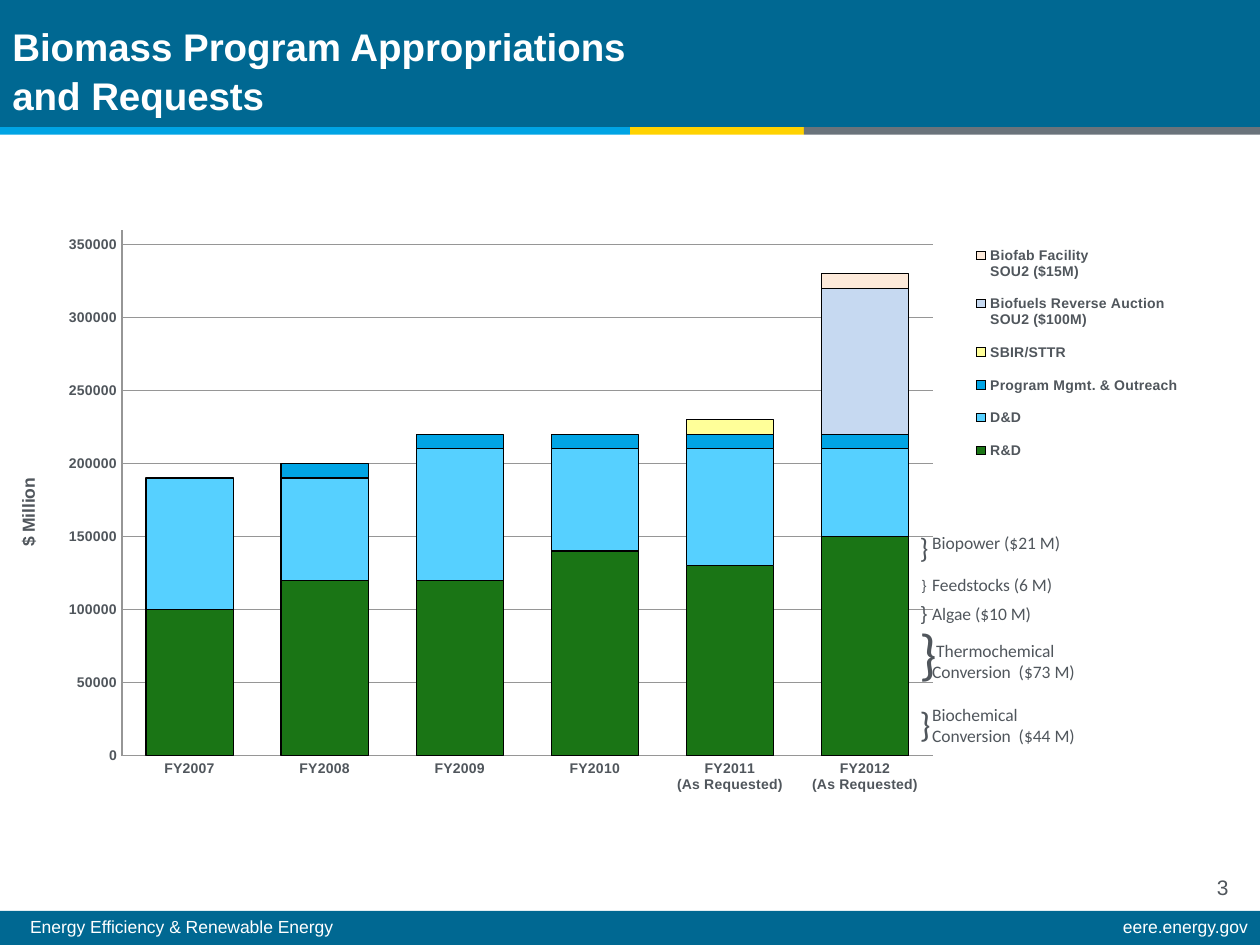
from dataclasses import dataclass

from lxml import etree
from pptx import Presentation
from pptx.chart.data import CategoryChartData
from pptx.dml.color import RGBColor
from pptx.enum.chart import XL_CHART_TYPE, XL_LEGEND_POSITION, XL_TICK_MARK
from pptx.enum.shapes import MSO_SHAPE
from pptx.enum.text import MSO_ANCHOR, PP_ALIGN
from pptx.oxml.ns import qn
from pptx.util import Inches, Pt

STACKED = XL_CHART_TYPE.COLUMN_STACKED
RIGHT_SIDE = XL_LEGEND_POSITION.RIGHT
NO_TICK = XL_TICK_MARK.NONE
RECT = MSO_SHAPE.RECTANGLE
MIDDLE = MSO_ANCHOR.MIDDLE
CENTER, RIGHT = PP_ALIGN.CENTER, PP_ALIGN.RIGHT


@dataclass(frozen=True)
class Theme:
    navy: str = "006892"
    sky: str = "00A4E4"
    gold: str = "FFD200"
    slate: str = "6A737B"
    text: str = "50565C"
    white: str = "FFFFFF"
    black: str = "000000"
    grid: str = "969696"
    sans: str = "Arial"
    label: str = "Calibri"
    title: int = 22
    page: int = 12
    body: int = 10
    small: int = 8


THEME = Theme()

YEARS = ["FY2007", "FY2008", "FY2009", "FY2010",
         "FY2011\n(As Requested)", "FY2012\n(As Requested)"]
FUNDS = [
    ("R&D", "1A7515", [100000, 120000, 120000, 140000, 130000, 150000]),
    ("D&D", "56D0FF", [90000, 70000, 90000, 70000, 80000, 60000]),
    ("Program Mgmt. & Outreach", THEME.sky,
     [0, 10000, 10000, 10000, 10000, 10000]),
    ("SBIR/STTR", "FFFF99", [0, 0, 0, 0, 10000, 0]),
    ("Biofuels Reverse Auction \nSOU2 ($100M)", "C6D9F1",
     [0, 0, 0, 0, 0, 100000]),
    ("Biofab Facility\nSOU2 ($15M)", "FDEADA", [0, 0, 0, 0, 0, 10000]),
]
NOTES = [
    ("Biopower ($21 M)", 4.17, 1.39, 0.27),
    ("Feedstocks (6 M)", 4.51, 1.39, 0.27),
    ("Algae ($10 M)", 4.74, 1.3, 0.27),
    (" Thermochemical Conversion  ($73 M)", 5.03, 1.48, 0.43),
    ("Biochemical\nConversion  ($44 M)", 5.54, 1.65, 0.43),
]
BRACES = [
    (4.16, 0.26, 0.37, 16, THEME.label),
    (4.53, 0.27, 0.23, 8, THEME.sans),
    (4.72, 0.27, 0.29, 11, THEME.sans),
    (4.86, 0.28, 0.63, 32, THEME.label),
    (5.53, 0.28, 0.43, 20, THEME.label),
]


def apply(obj, values):
    for name, value in values.items():
        setattr(obj, name, value)


def color(code):
    return RGBColor.from_string(code)


def place(node, index, **spots):
    old = node.find(qn("c:layout"))
    if old is not None:
        node.remove(old)
    layout = etree.Element(qn("c:layout"))
    manual = etree.SubElement(layout, qn("c:manualLayout"))
    for tag, value in spots.items():
        etree.SubElement(manual, qn("c:" + tag)).set("val", str(value))
    node.insert(index, layout)


class Painter:
    def __init__(self, slide, theme):
        self.slide = slide
        self.theme = theme

    def font(self, font, size, tone=None, name=None, bold=False):
        apply(font, {"size": Pt(size), "name": name or self.theme.sans,
                     "bold": bold})
        font.color.rgb = color(tone or self.theme.text)

    def line(self, line, tone):
        line.width = Pt(0.75)
        line.color.rgb = color(tone)

    def bar(self, box, tone):
        shape = self.slide.shapes.add_shape(RECT, *map(Inches, box))
        shape.shadow.inherit = False
        shape.fill.solid()
        shape.fill.fore_color.rgb = color(tone)
        shape.line.fill.background()

    def text(self, words, box, size, tone=None, name=None, bold=False,
             anchor=None, **para):
        frame = self.slide.shapes.add_textbox(*map(Inches, box)).text_frame
        apply(frame, {"word_wrap": True, "text": words})
        if anchor is not None:
            frame.vertical_anchor = anchor
        for item in frame.paragraphs:
            apply(item, para)
            for run in item.runs:
                self.font(run.font, size, tone, name, bold)

    def chart(self, box, years, funds):
        theme = self.theme
        data = CategoryChartData(number_format="General")
        data.categories = years
        for name, _, values in funds:
            data.add_series(name, values)
        frame = self.slide.shapes.add_chart(STACKED, *map(Inches, box), data)
        chart = frame.chart
        apply(chart, {"has_title": False, "has_legend": True})
        self.font(chart.font, theme.body)

        plot = chart.plots[0]
        apply(plot, {"gap_width": 55, "overlap": 100, "vary_by_categories": False})
        for series, (_, tone, _) in zip(plot.series, funds):
            series.format.fill.solid()
            series.format.fill.fore_color.rgb = color(tone)
            self.line(series.format.line, theme.black)

        value = chart.value_axis
        apply(value, {"minimum_scale": 0, "maximum_scale": 360000,
                      "major_unit": 50000, "has_major_gridlines": True})
        self.line(value.major_gridlines.format.line, theme.grid)
        for axis in (chart.category_axis, value):
            apply(axis, {"major_tick_mark": NO_TICK, "minor_tick_mark": NO_TICK})
            self.font(axis.tick_labels.font, theme.small, bold=True)
            self.line(axis.format.line, theme.grid)

        title = value.axis_title
        title.text_frame.text = "$ Million"
        run = title.text_frame.paragraphs[0].runs[0]
        self.font(run.font, theme.body, bold=True)
        edge = {"xMode": "edge", "yMode": "edge"}
        place(title._element, 1, **edge, x=0.01, y=0.43)

        legend = chart.legend
        apply(legend, {"position": RIGHT_SIDE, "include_in_layout": False})
        self.font(legend.font, theme.small, bold=True)
        place(legend._element, 1, **edge, x=0.76, y=0.04, w=0.19, h=0.39)
        place(plot._element.getparent(), 0, layoutTarget="inner", **edge,
              x=0.096, y=0.039, w=0.644, h=0.838)


def main():
    deck = Presentation()
    apply(deck, {"slide_width": Inches(10), "slide_height": Inches(7.5)})
    slide = deck.slides.add_slide(deck.slide_layouts[6])
    pen = Painter(slide, THEME)

    pen.bar((0, 0, 10, 1.01), THEME.navy)
    pen.bar((0, 7.23, 10, 0.27), THEME.navy)
    left = 0
    for width, tone in ((5, THEME.sky), (1.38, THEME.gold), (3.62, THEME.slate)):
        pen.bar((left, 1.01, width, 0.06), tone)
        left += width

    pen.text("Energy Efficiency & Renewable Energy", (0.14, 7.24, 7.97, 0.26),
             THEME.body, THEME.white, line_spacing=0.9)
    pen.text("eere.energy.gov", (5.99, 7.24, 4.01, 0.26),
             THEME.body, THEME.white, line_spacing=0.9, alignment=RIGHT)
    pen.text("3", (9.56, 6.89, 0.43, 0.3), THEME.page)
    pen.text("Biomass Program Appropriations \vand Requests", (0, 0.2, 9, 0.7),
             THEME.title, THEME.white, bold=True, anchor=MIDDLE,
             line_spacing=Pt(28))

    pen.chart((0.01, 1.63, 9.99, 4.98), YEARS, FUNDS)
    for words, top, width, height in NOTES:
        pen.text(words, (7.3, top, width, height), THEME.body, name=THEME.label)
    for top, width, height, size, name in BRACES:
        pen.text("}", (7.2, top, width, height), size, name=name,
                 alignment=CENTER)

    deck.save("out.pptx")


if __name__ == "__main__":
    main()
